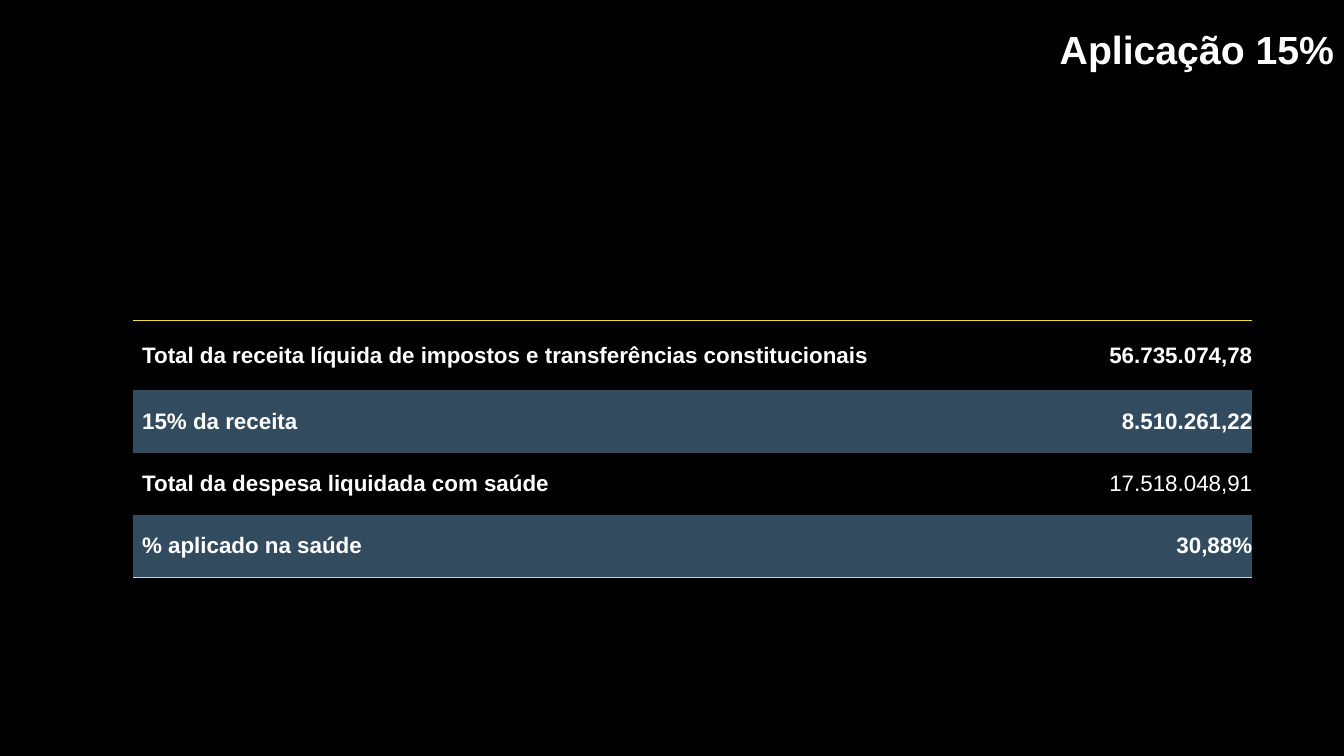
import pptx
import pptx.util
import pptx.dml.color
import pptx.enum.text
import pptx.oxml
import pptx.oxml.ns
from dataclasses import dataclass

Inches = pptx.util.Inches
Pt = pptx.util.Pt
RGB = pptx.dml.color.RGBColor.from_string
ALIGN = pptx.enum.text.PP_ALIGN
MIDDLE = pptx.enum.text.MSO_ANCHOR.MIDDLE
NO_STYLE = "{2D5ABB26-0587-4C30-8999-92F81FD0307C}"


@dataclass(frozen=True)
class Theme:
    font: str = "Arial"
    background: str = "000000"
    text: str = "FFFFFF"
    band: str = "324B5F"
    rule: str = "F4DE3A"
    title_size: int = 28
    table_size: int = 16
    rule_width: int = 1


class Deck:
    def __init__(self, prs, theme):
        self.theme = theme
        self.s = prs.slides.add_slide(prs.slide_layouts[5])
        fill = self.s.background.fill
        fill.solid()
        fill.fore_color.rgb = RGB(theme.background)

    def add_text(self, tf, text, size, align, bold=True):
        p = tf.paragraphs[0]
        p.alignment = align
        r = p.add_run()
        r.text = text
        r.font.name = self.theme.font
        r.font.size = Pt(size)
        r.font.bold = bold
        r.font.color.rgb = RGB(self.theme.text)

    def title(self, text, left, top, width, height):
        sp = self.s.shapes.title
        sp.left, sp.top = Inches(left), Inches(top)
        sp.width, sp.height = Inches(width), Inches(height)
        tf = sp.text_frame
        tf.auto_size = pptx.enum.text.MSO_AUTO_SIZE.NONE
        tf.vertical_anchor = MIDDLE
        self.add_text(tf, text, self.theme.title_size, ALIGN.RIGHT)

    def border(self, cell, side):
        # Border lines come before the fill in the cell properties
        line = pptx.oxml.parse_xml(
            f'<a:{side} {pptx.oxml.ns.nsdecls("a")} w="{Pt(self.theme.rule_width)}">'
            f'<a:solidFill><a:srgbClr val="{self.theme.rule}"/></a:solidFill></a:{side}>')
        cell._tc.get_or_add_tcPr().insert(0, line)

    def table(self, rows, left, top, widths, heights):
        frame = self.s.shapes.add_table(
            len(rows), len(widths), Inches(left), Inches(top),
            Inches(sum(widths)), Inches(sum(heights)))
        table = frame.table
        table.first_row = table.horz_banding = False
        table._tbl.tblPr.find(pptx.oxml.ns.qn("a:tableStyleId")).text = NO_STYLE
        for column, width in zip(table.columns, widths):
            column.width = Inches(width)
        for i, (label, value, bold_value) in enumerate(rows):
            table.rows[i].height = Inches(heights[i])
            entries = ((label, ALIGN.LEFT, True, 0.09),
                       (value, ALIGN.RIGHT, bold_value, 0))
            for j, (text, align, bold, indent) in enumerate(entries):
                cell = table.cell(i, j)
                cell.margin_left = Inches(indent)
                cell.margin_right = cell.margin_top = cell.margin_bottom = 0
                cell.vertical_anchor = MIDDLE
                self.add_text(cell.text_frame, text, self.theme.table_size, align, bold)
                # Every second row is banded
                if i % 2:
                    cell.fill.solid()
                    cell.fill.fore_color.rgb = RGB(self.theme.band)
                else:
                    cell.fill.background()
                # Rules close the table above and below
                if i == 0:
                    self.border(cell, "lnT")
                if i == len(rows) - 1:
                    self.border(cell, "lnB")


def main():
    prs = pptx.Presentation()
    prs.slide_width, prs.slide_height = Inches(13.33), Inches(7.5)
    deck = Deck(prs, Theme())

    # Title
    deck.title("Aplicação 15%", 2.79, 0.2, 10.54, 0.57)

    # Health spending: label, value, bold value
    rows = [
        ("Total da receita líquida de impostos e transferências constitucionais",
         "56.735.074,78", True),
        ("15% da receita", "8.510.261,22", True),
        ("Total da despesa liquidada com saúde", "17.518.048,91", False),
        ("% aplicado na saúde", "30,88%", True),
    ]
    deck.table(rows, 1.32, 3.18, [7.69, 3.41], [0.69] + [0.62] * 3)

    prs.save("out.pptx")


if __name__ == "__main__":
    main()
